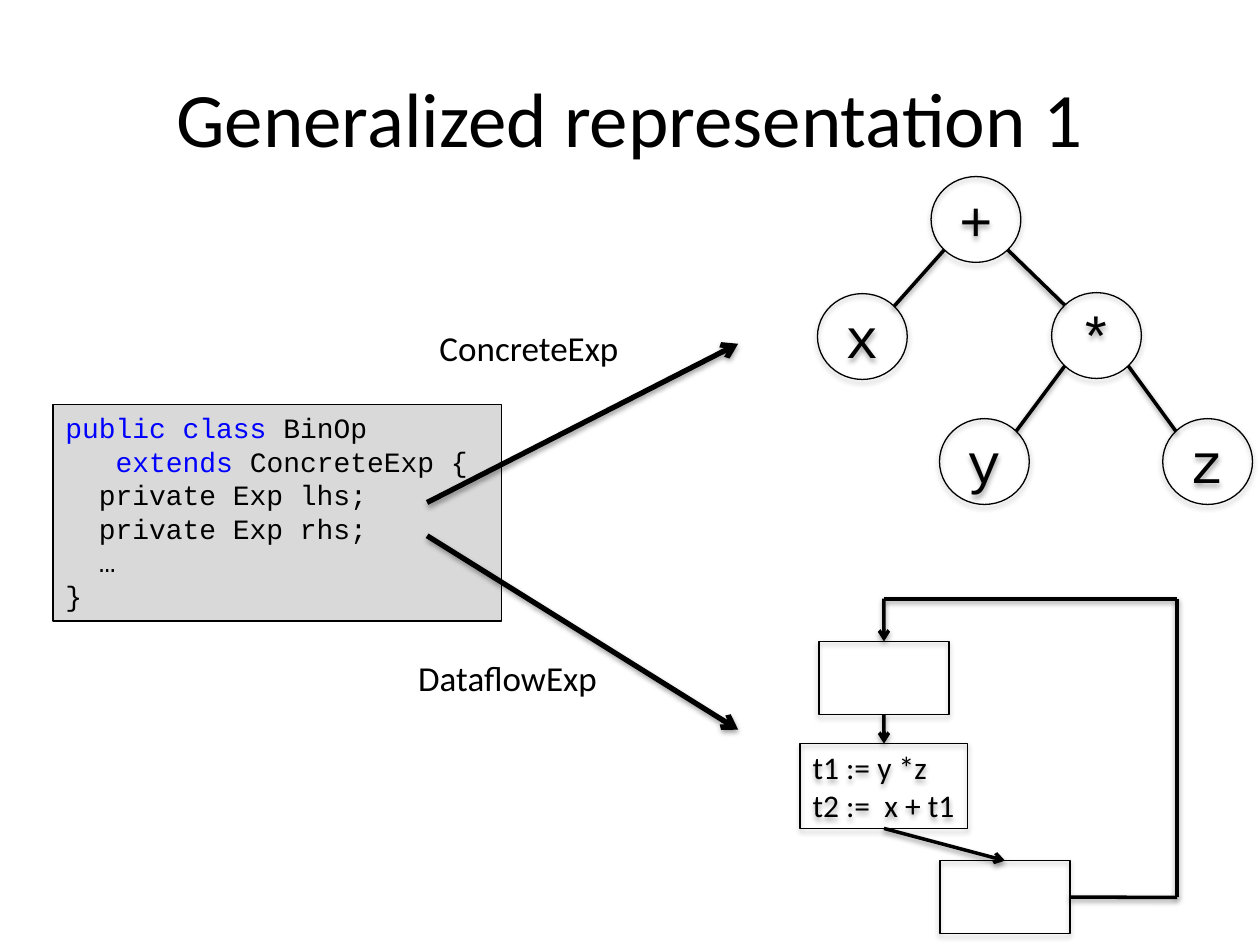
import math

import lxml.etree
import pptx
import pptx.dml.color
import pptx.enum.shapes
import pptx.enum.text
import pptx.oxml.ns
import pptx.util

Cm = pptx.util.Cm
Pt = pptx.util.Pt
RGBColor = pptx.dml.color.RGBColor
SHAPE = pptx.enum.shapes.MSO_SHAPE
STRAIGHT = pptx.enum.shapes.MSO_CONNECTOR.STRAIGHT
ANCHOR = pptx.enum.text.MSO_ANCHOR
ALIGN = pptx.enum.text.PP_ALIGN
qn = pptx.oxml.ns.qn

BLACK = RGBColor(0x00, 0x00, 0x00)
BLUE = RGBColor(0x00, 0x00, 0xFF)
GREY = RGBColor(0xD9, 0xD9, 0xD9)
BODY_FONT = "Calibri"
CODE_FONT = "Courier New"
TOP, BOTTOM, RIGHT = 0, 2, 3

# Each line of code is a list of (text, is keyword)
CODE = [
    [("public class ", True), ("BinOp", False)],
    [("   ", False), ("extends ", True), ("ConcreteExp {", False)],
    [("  private Exp lhs;", False)],
    [("  private Exp rhs;", False)],
    [("  …", False)],
    [("}", False)],
]


def format_span(span, size, font=BODY_FONT, color=BLACK):
    span.font.size = Pt(size)
    span.font.name = font
    span.font.color.rgb = color


def format_text(frame, size, font=BODY_FONT, align=ALIGN.LEFT):
    for para in frame.paragraphs:
        para.alignment = align
        for span in para.runs:
            format_span(span, size, font)


def add_shadow(effects, distance, opacity):
    shadow = lxml.etree.SubElement(
        effects, qn("a:outerShdw"), blurRad=str(Pt(3.1)), dist=str(Pt(distance)),
        dir="5400000", rotWithShape="0")
    color = lxml.etree.SubElement(shadow, qn("a:srgbClr"), val=str(BLACK))
    lxml.etree.SubElement(color, qn("a:alpha"), val=str(opacity * 1000))


def add_outlined(page, kind, left, top, width, height, fill=None):
    box = page.shapes.add_shape(kind, Cm(left), Cm(top), Cm(width), Cm(height))
    if fill is None:
        box.fill.background()
    else:
        box.fill.solid()
        box.fill.fore_color.rgb = fill
    box.line.color.rgb = BLACK
    box.line.width = Pt(0.75)
    box.shadow.inherit = False
    if fill is None:
        add_shadow(box.element.spPr.find(qn("a:effectLst")), 1.8, 35)
    return box


def add_line(page, start, end, width=2, arrow=False):
    """Draw a line; start and end are points or (shape, site) joints."""
    points = [(0, 0) if hasattr(p[0], "shape_id") else p for p in (start, end)]
    line = page.shapes.add_connector(
        STRAIGHT, *[Cm(value) for point in points for value in point])
    if hasattr(start[0], "shape_id"):
        line.begin_connect(*start)
    if hasattr(end[0], "shape_id"):
        line.end_connect(*end)
    line.line.color.rgb = BLACK
    line.line.width = Pt(width)
    properties = line.element.spPr
    if arrow:
        lxml.etree.SubElement(
            properties.find(qn("a:ln")), qn("a:tailEnd"), type="arrow")
    add_shadow(lxml.etree.SubElement(properties, qn("a:effectLst")), 1.6, 38)


def add_title(page, left, top, width, height):
    title = page.shapes.title
    title.left, title.top = Cm(left), Cm(top)
    title.width, title.height = Cm(width), Cm(height)
    title.text_frame.text = "Generalized representation 1"
    title.text_frame.vertical_anchor = ANCHOR.MIDDLE
    format_text(title.text_frame, 44, align=ALIGN.CENTER)


def add_code(page, left, top, width, height):
    box = add_outlined(page, SHAPE.RECTANGLE, left, top, width, height, GREY)
    frame = box.text_frame
    frame.word_wrap = True
    frame.vertical_anchor = ANCHOR.TOP
    for index, parts in enumerate(CODE):
        para = frame.add_paragraph() if index else frame.paragraphs[0]
        para.alignment = ALIGN.LEFT
        for text, keyword in parts:
            span = para.add_run()
            span.text = text
            format_span(span, 16, CODE_FONT, BLUE if keyword else BLACK)


def add_tree(page, left, top):
    width, height = 1.81, 1.73
    nodes = {"+": (2.29, 0), "x": (0, 2.36), "*": (4.72, 2.34),
             "y": (2.46, 4.88), "z": (6.96, 4.88)}

    def diagonal(name, side, level):
        """Point on a node's rim at 45 degrees; side and level are -1 or 1."""
        x, y = nodes[name]
        reach = math.sqrt(0.5)
        return (left + x + width / 2 * (1 + side * reach),
                top + y + height / 2 * (1 + level * reach))

    # Edges from parent to child
    for parent, child, side in (("+", "x", -1), ("+", "*", 1),
                                ("*", "y", -1), ("*", "z", 1)):
        add_line(page, diagonal(parent, side, 1), diagonal(child, -side, -1))
    # Nodes
    for name, (x, y) in nodes.items():
        node = add_outlined(page, SHAPE.OVAL, left + x, top + y, width, height)
        node.text_frame.text = name
        node.text_frame.vertical_anchor = ANCHOR.MIDDLE
        format_text(node.text_frame, 32, CODE_FONT, ALIGN.CENTER)


def add_flow(page, left, top, width):
    # Basic blocks
    first, middle, last = [
        add_outlined(page, SHAPE.RECTANGLE, left + x, top + y, w, h)
        for x, y, w, h in ((0.38, 0.86, 2.62, 1.47), (0, 2.92, 3.38, 1.71),
                           (2.82, 5.28, 2.62, 1.47))]
    frame = middle.text_frame
    frame.text = "t1 := y *z\nt2 :=  x + t1"
    frame.word_wrap = True
    frame.vertical_anchor = ANCHOR.MIDDLE
    format_text(frame, 18)
    # Forward flow
    add_line(page, (first, BOTTOM), (middle, TOP), arrow=True)
    add_line(page, (middle, BOTTOM), (last, TOP), arrow=True)
    # Back edge from the last block to the first
    right = left + width
    corners = [(right, top + 6.02), (right, top), (left + 1.69, top)]
    route = [(last, RIGHT), *corners, (first, TOP)]
    for start, end in zip(route, route[1:]):
        add_line(page, start, end, arrow=end == route[-1])


def add_branch(page, label, left, top, start, end):
    add_line(page, start, end, width=3, arrow=True)
    box = page.shapes.add_textbox(Cm(left), Cm(top), Cm(4.17), Cm(1.11))
    box.text_frame.text = label
    box.text_frame.word_wrap = False
    format_text(box.text_frame, 20)


def main():
    deck = pptx.Presentation()
    deck.slide_width, deck.slide_height = Cm(25.4), Cm(19.05)
    page = deck.slides.add_slide(deck.slide_layouts.get_by_name("Title Only"))
    add_title(page, 1.27, 0.76, 22.86, 3.18)
    add_code(page, 1.07, 8.15, 9.04, 4.37)
    add_tree(page, 16.48, 3.56)
    add_flow(page, 16.13, 12.07, 7.6)
    add_branch(page, "ConcreteExp", 8.61, 6.45, (8.61, 10.13), (14.88, 6.93))
    add_branch(page, "DataflowExp", 8.18, 13.11, (8.61, 10.8), (14.88, 14.71))
    deck.save("out.pptx")


if __name__ == "__main__":
    main()
